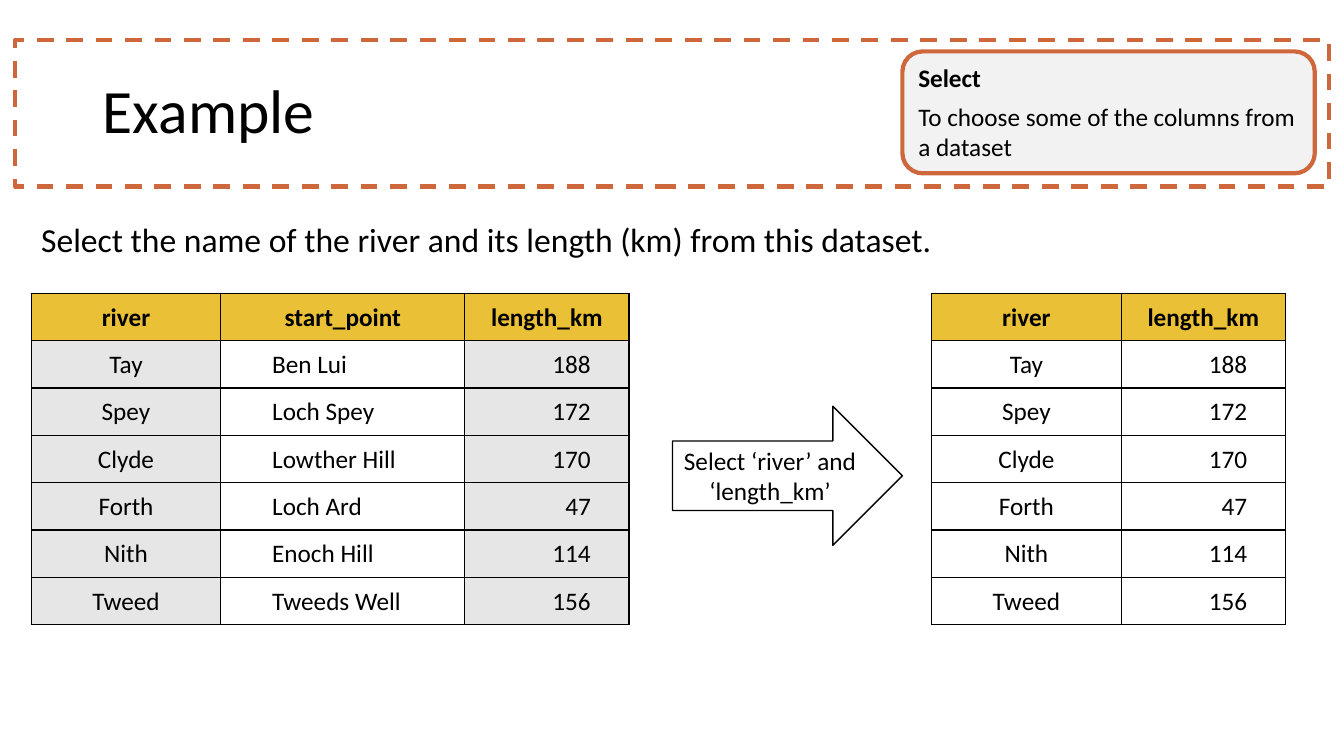
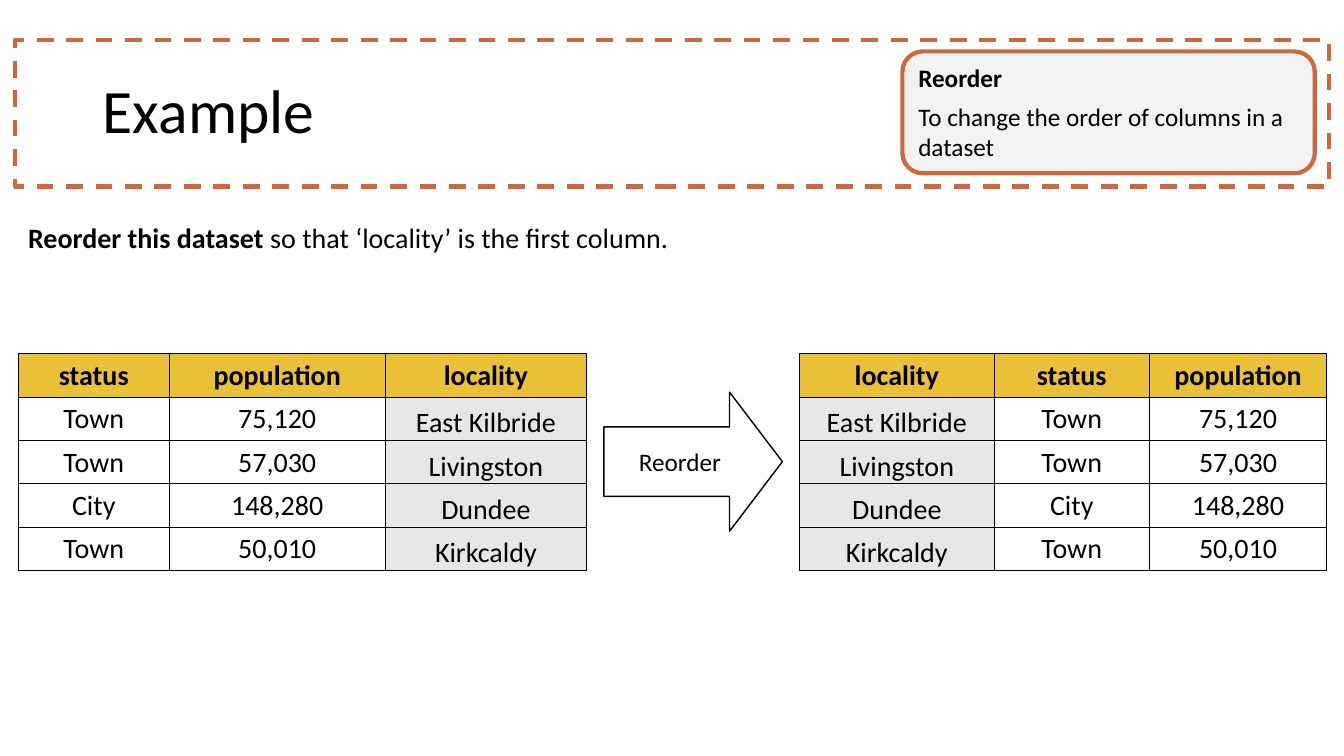
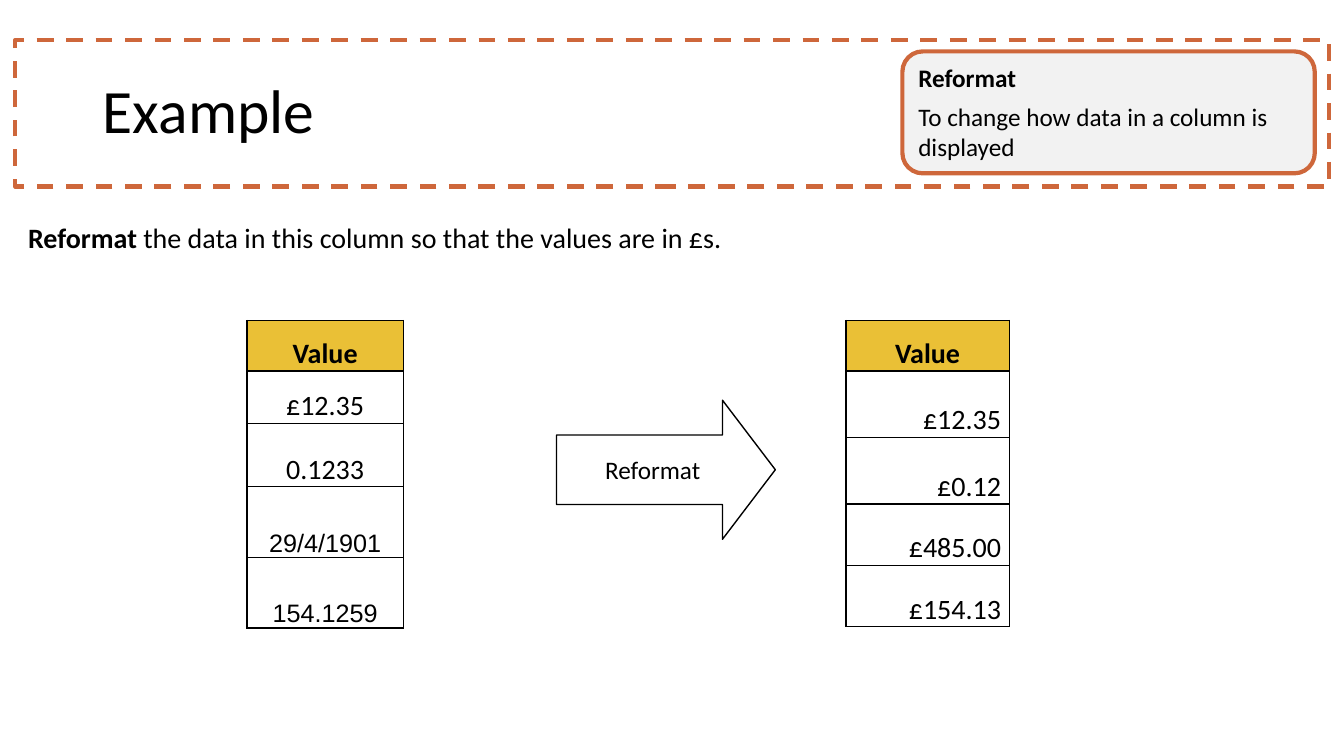
from dataclasses import dataclass, replace

from lxml.etree import SubElement
from pptx import Presentation
from pptx.dml.color import RGBColor
from pptx.enum.dml import MSO_LINE
from pptx.enum.shapes import MSO_SHAPE
from pptx.enum.text import MSO_ANCHOR, PP_ALIGN
from pptx.oxml.ns import qn
from pptx.util import Inches, Pt


@dataclass(frozen=True)
class Theme:
    """Colours, fonts and type sizes of the deck."""

    ink: str = "000000"
    paper: str = "FFFFFF"
    accent: str = "CE673B"
    panel: str = "F2F2F2"
    header: str = "EAC036"
    shaded: str = "E7E6E6"
    font: str = "Calibri"
    plain_font: str = "Arial"
    title: int = 44
    lead: int = 24
    text: int = 20
    small: int = 18


THEME = Theme()


@dataclass(frozen=True)
class Column:
    """One table column with its values and their look."""

    header: str
    width: float
    values: tuple
    fill: str = THEME.paper
    align: PP_ALIGN = PP_ALIGN.CENTER
    anchor: MSO_ANCHOR = MSO_ANCHOR.MIDDLE
    left: float = 0.01
    right: float = 0.01
    header_anchor: MSO_ANCHOR = MSO_ANCHOR.MIDDLE


def colour(code):
    """Turn a hex code into a colour."""
    return RGBColor.from_string(code)


def set_font(font, size, bold=False, name=THEME.font):
    """Apply the deck's ink colour with a face, size and weight."""
    font.name = name
    font.size = Pt(size)
    font.bold = bold
    font.color.rgb = colour(THEME.ink)


def add_outlined(slide, preset, box, fill, line, width):
    """Add a shadowless preset shape with an outline and optional fill."""
    shape = slide.shapes.add_shape(preset, *map(Inches, box))
    shape.shadow.inherit = False
    if fill:
        shape.fill.solid()
        shape.fill.fore_color.rgb = colour(fill)
    else:
        shape.fill.background()
    shape.line.color.rgb = colour(line)
    shape.line.width = Pt(width)
    return shape


def prepare_layout(layout):
    """Place the title and drop the unused footers of the layout."""
    for placeholder in list(layout.placeholders):
        if placeholder.placeholder_format.idx:
            placeholder.element.getparent().remove(placeholder.element)
        else:
            placeholder.left, placeholder.top = Inches(0.92), Inches(0.4)
            placeholder.width, placeholder.height = Inches(11.5), Inches(1.45)


def add_title_band(slide):
    """Put the dashed title band on the layout behind the title."""
    band = add_outlined(slide, MSO_SHAPE.RECTANGLE, (0.15, 0.4, 13.03, 1.45),
                        None, THEME.accent, 3)
    band.line.dash_style = MSO_LINE.DASH
    slide.slide_layout.shapes._spTree.insert(2, band.element)


def add_example_slide(deck, layout, term, meaning):
    """Add a slide with its title and the definition of a term."""
    slide = deck.slides.add_slide(layout)
    frame = slide.shapes.title.text_frame
    frame.text = "Example"
    frame.vertical_anchor = MSO_ANCHOR.MIDDLE
    heading = frame.paragraphs[0]
    heading.alignment = PP_ALIGN.LEFT
    heading.line_spacing = 0.9
    set_font(heading.runs[0].font, THEME.title)

    definition = add_outlined(slide, MSO_SHAPE.ROUNDED_RECTANGLE,
                              (8.95, 0.51, 4.09, 1.21),
                              THEME.panel, THEME.accent, 3).text_frame
    definition.text = f"{term}\n{meaning}"
    definition.vertical_anchor = MSO_ANCHOR.TOP
    for paragraph, bold in zip(definition.paragraphs, (True, False)):
        paragraph.alignment = PP_ALIGN.LEFT
        paragraph.space_after = Pt(6)
        set_font(paragraph.runs[0].font, THEME.small, bold)
    return slide


def add_instruction(slide, box, size, rest, lead=""):
    """Add the task sentence, opening with an optional bold lead."""
    frame = slide.shapes.add_textbox(*map(Inches, box)).text_frame
    frame.word_wrap = True
    for words, bold in ((lead, True), (rest, False)):
        if words:
            run = frame.paragraphs[0].add_run()
            run.text = words
            set_font(run.font, size, bold)


def add_step_arrow(slide, box, label, head=0.5):
    """Add a labelled block arrow."""
    arrow = add_outlined(slide, MSO_SHAPE.RIGHT_ARROW, box,
                         THEME.paper, THEME.ink, 1)
    arrow.adjustments[1] = head
    frame = arrow.text_frame
    frame.text = label
    frame.vertical_anchor = MSO_ANCHOR.MIDDLE
    frame.paragraphs[0].alignment = PP_ALIGN.CENTER
    set_font(frame.paragraphs[0].runs[0].font, THEME.small)


def add_borders(cell):
    """Rule all four sides of a cell."""
    properties = cell._tc.get_or_add_tcPr()
    for position, side in enumerate(("a:lnL", "a:lnR", "a:lnT", "a:lnB")):
        line = SubElement(properties, qn(side), w=str(Pt(1)))
        fill = SubElement(line, qn("a:solidFill"))
        SubElement(fill, qn("a:srgbClr"), val=THEME.ink)
        properties.insert(position, line)


def fill_cell(cell, text, column, size, is_header):
    """Write and format one table cell."""
    cell.text = text
    cell.margin_left = Inches(0.01 if is_header else column.left)
    cell.margin_right = Inches(0.01 if is_header else column.right)
    cell.margin_top, cell.margin_bottom = Inches(0.01), 0
    cell.vertical_anchor = column.header_anchor if is_header else column.anchor
    cell.fill.solid()
    cell.fill.fore_color.rgb = colour(THEME.header if is_header else column.fill)
    paragraph = cell.text_frame.paragraphs[0]
    paragraph.alignment = PP_ALIGN.CENTER if is_header else column.align
    set_font(paragraph.runs[0].font, size, is_header)
    add_borders(cell)


def add_dataset(slide, left, top, columns, heights, size):
    """Add a ruled table built from columns."""
    width = sum(column.width for column in columns)
    table = slide.shapes.add_table(
        len(heights), len(columns), Inches(left), Inches(top),
        Inches(width), Inches(sum(heights))).table
    table.horz_banding = False
    for row, height in zip(table.rows, heights):
        row.height = Inches(height)
    for across, column in enumerate(columns):
        table.columns[across].width = Inches(column.width)
        for down, text in enumerate((column.header, *column.values)):
            fill_cell(table.cell(down, across), text, column, size, down == 0)
    return table


def build_select(slide):
    """Show two columns selected from the rivers dataset."""
    river = Column("river", 1.88,
                   ("Tay", "Spey", "Clyde", "Forth", "Nith", "Tweed"))
    start = Column("start_point", 2.42,
                   ("Ben Lui", "Loch Spey", "Lowther Hill", "Loch Ard",
                    "Enoch Hill", "Tweeds Well"),
                   align=PP_ALIGN.LEFT, left=0.51)
    length = Column("length_km", 1.63, ("188", "172", "170", "47", "114", "156"),
                    align=PP_ALIGN.RIGHT, right=0.38)
    chosen = [replace(column, fill=THEME.shaded) for column in (river, length)]
    heights = [0.47] * 7

    add_instruction(slide, (0.31, 2.12, 9.66, 0.5), THEME.lead,
                    "Select the name of the river and its length (km) from this dataset.")
    add_dataset(slide, 0.31, 2.91, (chosen[0], start, chosen[1]), heights, THEME.small)
    add_dataset(slide, 9.24, 2.91, (river, length), heights, THEME.small)
    add_step_arrow(slide, (6.67, 4.03, 2.28, 1.38), "Select ‘river’ and ‘length_km’")


def build_reorder(slide):
    """Show the locality column moved to the front."""
    status = Column("status", 1.5, ("Town", "Town", "City", "Town"))
    population = Column("population", 2.14, ("75,120", "57,030", "148,280", "50,010"))
    locality = Column("locality", 2,
                      ("East Kilbride", "Livingston", "Dundee", "Kirkcaldy"),
                      fill=THEME.shaded, anchor=MSO_ANCHOR.BOTTOM)
    reordered = (replace(locality, width=1.93), replace(status, width=1.54),
                 replace(population, width=1.76))
    heights = [0.43] * 5

    add_instruction(slide, (0.18, 2.14, 8.93, 0.44), THEME.text,
                    "so that ‘locality’ is the first column.", "Reorder this dataset ")
    add_dataset(slide, 0.18, 3.51, (status, population, locality), heights, THEME.text)
    add_dataset(slide, 7.93, 3.51, reordered, heights, THEME.text)
    add_step_arrow(slide, (5.99, 3.89, 1.77, 1.38), "Reorder", 0.38)


def build_reformat(slide):
    """Show mixed values turned into pounds."""
    mixed = Column("Value", 1.55, ("£12.35", "0.1233", "29/4/1901", "154.1259"),
                   anchor=MSO_ANCHOR.BOTTOM, header_anchor=MSO_ANCHOR.BOTTOM)
    pounds = replace(mixed, width=1.62, align=PP_ALIGN.RIGHT, right=0.08,
                     values=("£12.35", "£0.12", "£485.00", "£154.13"))

    add_instruction(slide, (0.18, 2.14, 9.73, 0.44), THEME.text,
                    " the data in this column so that the values are in £s.", "Reformat")
    add_step_arrow(slide, (5.52, 3.97, 2.17, 1.38), "Reformat", 0.38)
    before = add_dataset(slide, 2.45, 3.18, (mixed,),
                         (0.5, 0.52, 0.63, 0.7, 0.7), THEME.text)
    for row in (3, 4):
        value = before.cell(row, 0).text_frame.paragraphs[0].runs[0]
        set_font(value.font, THEME.small, name=THEME.plain_font)
    add_dataset(slide, 8.39, 3.18, (pounds,),
                (0.5, 0.66, 0.66, 0.61, 0.61), THEME.text)


def main():
    """Build and save the deck."""
    deck = Presentation()
    deck.slide_width, deck.slide_height = Inches(13.33), Inches(7.5)
    layout = deck.slide_layouts.get_by_name("Title Only")
    prepare_layout(layout)
    examples = (
        ("Select", "To choose some of the columns from a dataset", build_select),
        ("Reorder", "To change the order of columns in a dataset", build_reorder),
        ("Reformat", "To change how data in a column is displayed", build_reformat),
    )
    for term, meaning, build in examples:
        build(add_example_slide(deck, layout, term, meaning))
    add_title_band(deck.slides[0])
    deck.save("out.pptx")


if __name__ == "__main__":
    main()
